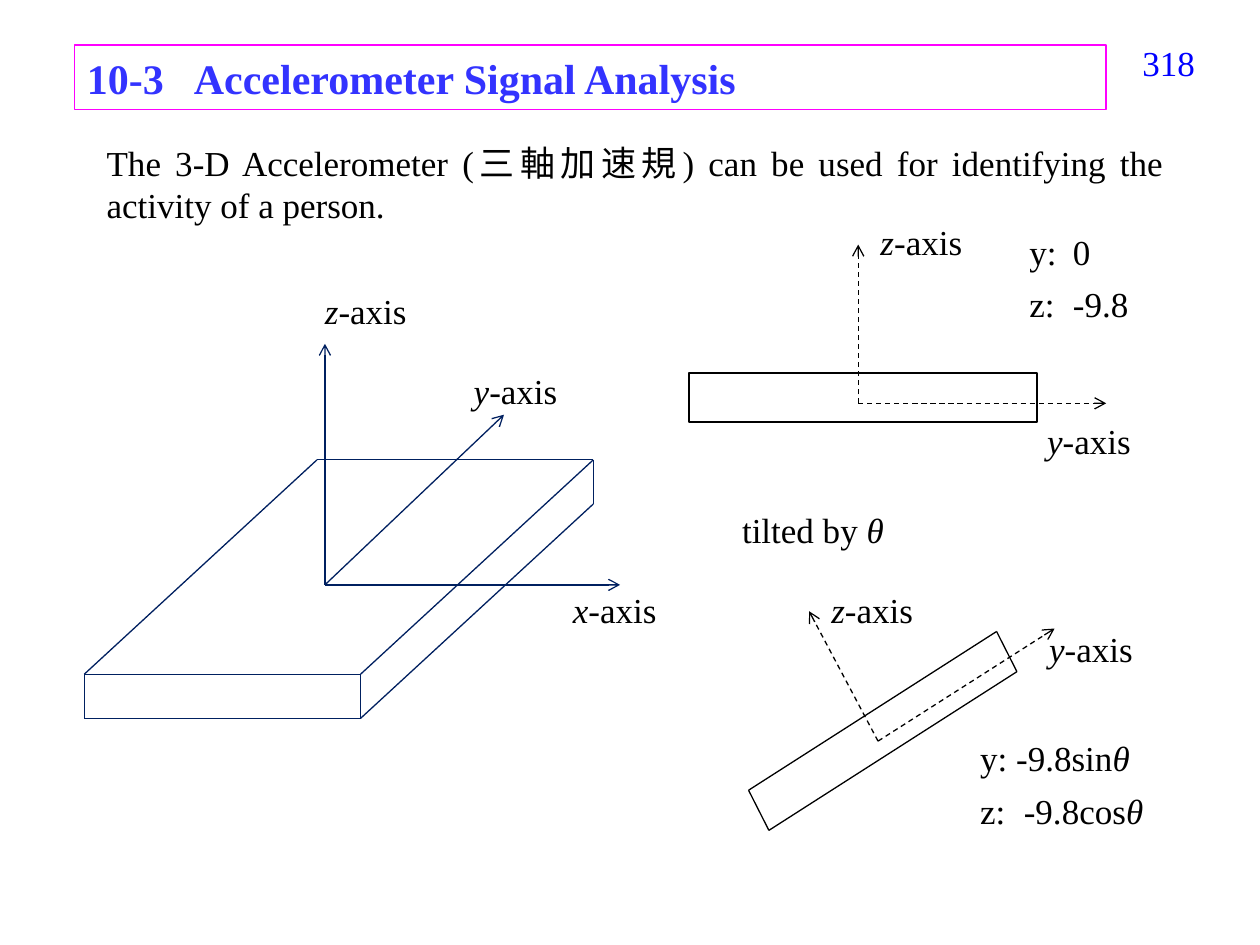
"""Build the accelerometer signal analysis slide."""
import dataclasses

import lxml.etree
import pptx
import pptx.dml.color
import pptx.enum.dml
import pptx.enum.shapes
import pptx.enum.text
import pptx.oxml.ns
import pptx.util

Cm = pptx.util.Cm
Pt = pptx.util.Pt
ALIGN = pptx.enum.text.PP_ALIGN


@dataclasses.dataclass(frozen=True)
class Theme:
    font: str = "Times New Roman"
    body_size: float = 20
    heading_size: float = 24
    line_width: float = 0.75
    ink: str = "000000"
    solid: str = "002060"
    heading: str = "3333FF"
    heading_frame: str = "FF00FF"
    page_number: str = "0000FF"


THEME = Theme()


def rgb(value):
    return pptx.dml.color.RGBColor.from_string(value)


def add_element(parent, tag, **attributes):
    return lxml.etree.SubElement(parent, pptx.oxml.ns.qn(tag), **attributes)


def add_runs(paragraph, runs, color, size, bold=False):
    for text, italic in runs:
        run = paragraph.add_run()
        run.text = text
        run.font.name = THEME.font
        run.font.size = Pt(size)
        run.font.bold = bold
        run.font.italic = italic
        run.font.color.rgb = rgb(color)


def set_tab(paragraph, position):
    properties = paragraph._p.get_or_add_pPr()
    tabs = add_element(properties, "a:tabLst")
    add_element(tabs, "a:tab", pos=str(Cm(position)), algn="l")


def add_text(slide, box, paragraphs, color=THEME.ink, align=ALIGN.LEFT, tab=None, inset=0.25):
    shape = slide.shapes.add_textbox(*map(Cm, box))
    frame = shape.text_frame
    frame.word_wrap = True
    frame.margin_left = frame.margin_right = Cm(inset)
    for index, runs in enumerate(paragraphs):
        paragraph = frame.add_paragraph() if index else frame.paragraphs[0]
        paragraph.alignment = align
        paragraph.space_before = Pt(6 if index else 0)
        if tab:
            set_tab(paragraph, tab)
        add_runs(paragraph, runs, color, THEME.body_size)


def add_axis_label(slide, letter, left, top, width=2.4, inset=0.25):
    runs = [(letter, True), ("-axis", False)]
    add_text(slide, (left, top, width, 1.12), [runs], inset=inset)


def add_frame(slide, box, color, width):
    shape = slide.shapes.add_shape(pptx.enum.shapes.MSO_SHAPE.RECTANGLE, *map(Cm, box))
    shape.shadow.inherit = False
    shape.fill.background()
    shape.line.color.rgb = rgb(color)
    shape.line.width = Pt(width)
    return shape


def add_heading(slide, number, title):
    shape = add_frame(slide, (1.5, 0.91, 20.8, 1.3), THEME.heading_frame, THEME.line_width)
    paragraph = shape.text_frame.paragraphs[0]
    paragraph.alignment = ALIGN.LEFT
    set_tab(paragraph, 2.16)
    add_runs(paragraph, [(f"{number}\t{title}", False)], THEME.heading, THEME.heading_size, bold=True)


def add_line(slide, start, end, color, dashed=False, arrow=False):
    connector = slide.shapes.add_connector(
        pptx.enum.shapes.MSO_CONNECTOR.STRAIGHT, *map(Cm, (*start, *end)))
    connector.line.color.rgb = rgb(color)
    connector.line.width = Pt(THEME.line_width)
    if dashed:
        connector.line.dash_style = pptx.enum.dml.MSO_LINE.DASH
    if arrow:
        add_element(connector.line._get_or_add_ln(), "a:tailEnd", type="arrow")
    add_element(connector._element.spPr, "a:effectLst")


def add_axes(slide, origin, tips, color, dashed=False):
    for tip in tips:
        add_line(slide, origin, tip, color, dashed, arrow=True)


def shift(point, offset):
    return point[0] + offset[0], point[1] + offset[1]


def add_parallel_edges(slide, starts, offset, color):
    for start in starts:
        add_line(slide, start, shift(start, offset), color)


def add_slab(slide, corner, width, depth, height):
    right = shift(corner, width)
    back_right = shift(right, depth)
    edges = [
        (width, (corner, shift(corner, depth), shift(corner, height))),
        (depth, (corner, right, shift(right, height))),
        (height, (corner, right, back_right)),
    ]
    for offset, starts in edges:
        add_parallel_edges(slide, starts, offset, THEME.solid)


def add_tilted_bar(slide, corner, length, thickness):
    add_parallel_edges(slide, (corner, shift(corner, thickness)), length, THEME.ink)
    add_parallel_edges(slide, (corner, shift(corner, length)), thickness, THEME.ink)


def add_device_view(slide):
    add_slab(slide, (1.7, 13.59), (5.57, 0), (4.69, -4.32), (0, 0.89))
    add_axes(slide, (6.55, 11.79), [(12.5, 11.79), (10.16, 8.36), (6.55, 6.93)], THEME.solid)
    for letter, left, top in (("x", 11.3, 11.73), ("y", 9.3, 7.32), ("z", 6.3, 5.72)):
        add_axis_label(slide, letter, left, top)


def add_level_view(slide):
    add_frame(slide, (13.89, 7.52, 7.01, 0.99), THEME.ink, 1)
    add_axes(slide, (17.3, 8.13), [(22.3, 8.13), (17.3, 4.93)], THEME.ink, dashed=True)
    add_axis_label(slide, "y", 21.11, 8.33, width=1.8, inset=0)
    add_axis_label(slide, "z", 17.5, 4.32, width=2.8)
    readings = [[("y:\t0", False)], [("z:\t-9.8", False)]]
    add_text(slide, (20.5, 4.52, 2.6, 2.18), readings, tab=0.88)


def add_tilted_view(slide):
    add_text(slide, (14.71, 10.13, 5.8, 1.12), [[("tilted by ", False), ("θ", True)]])
    add_tilted_bar(slide, (15.09, 15.93), (5, -3.2), (0.41, 0.81))
    add_axes(slide, (17.7, 14.94), [(21.26, 12.67), (16.31, 12.32)], THEME.ink, dashed=True)
    add_axis_label(slide, "y", 20.9, 12.52)
    add_axis_label(slide, "z", 16.51, 11.73, width=2.8)
    readings = [[("y: -9.8sin", False), ("θ", True)], [("z:\t-9.8cos", False), ("θ", True)]]
    add_text(slide, (19.51, 14.73, 4, 2.18), readings, tab=0.88)


def main():
    presentation = pptx.Presentation()
    presentation.slide_width, presentation.slide_height = Cm(25.4), Cm(19.05)
    slide = presentation.slides.add_slide(presentation.slide_layouts[6])
    add_text(slide, (22.1, 0.71, 2.24, 1.32), [[("318", False)]], THEME.page_number, ALIGN.RIGHT)
    add_heading(slide, "10-3", "Accelerometer Signal Analysis")
    introduction = ("The 3-D Accelerometer (三軸加速規) can be used for identifying the "
                    "activity of a person.")
    add_text(slide, (1.9, 2.72, 21.8, 1.96), [[(introduction, False)]], align=ALIGN.JUSTIFY)
    add_device_view(slide)
    add_level_view(slide)
    add_tilted_view(slide)
    presentation.save("out.pptx")


if __name__ == "__main__":
    main()
